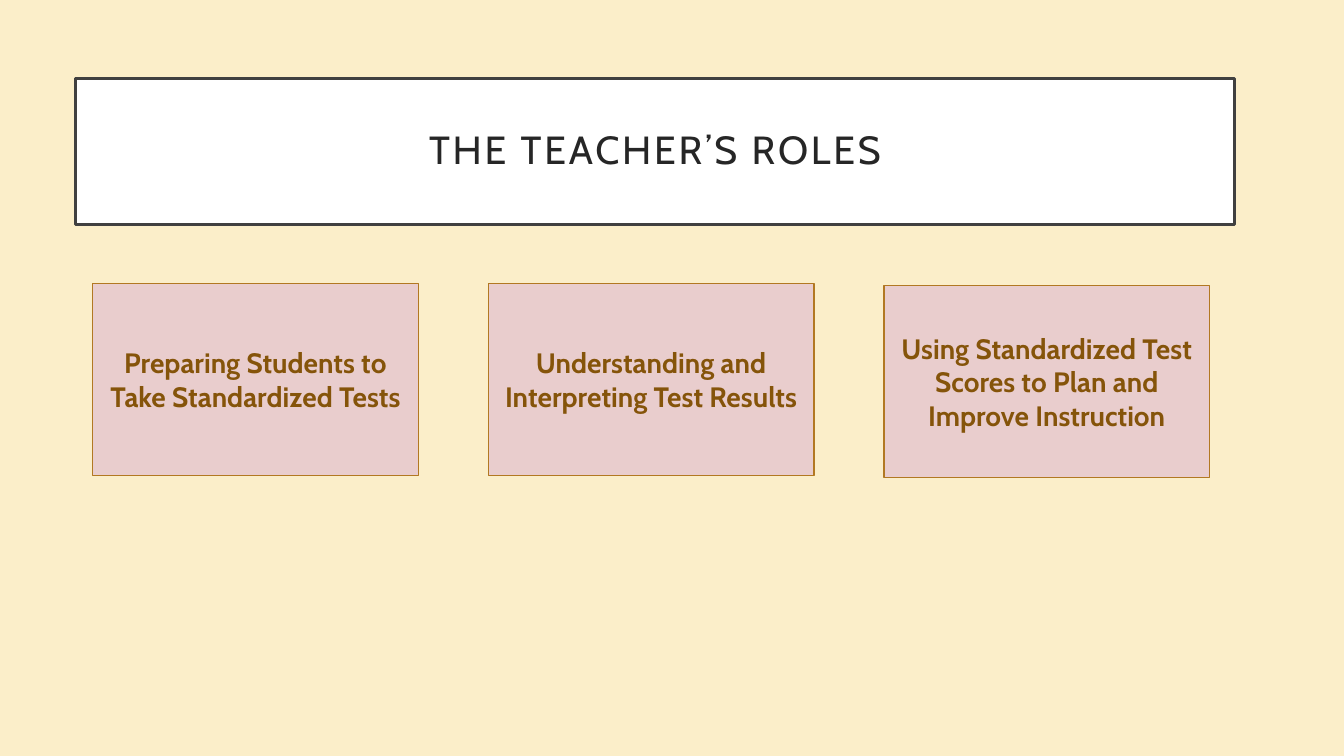
import pptx
import pptx.dml.color
import pptx.enum.shapes
import pptx.enum.text
import pptx.util

Pt = pptx.util.Pt
FONT = "Cabin"

TITLE = "THE TEACHER’S ROLES"
# Each role with its drop below the top of the row
ROLES = [
    ("Preparing Students to Take Standardized Tests", 0),
    ("Understanding and Interpreting Test Results", 0),
    ("Using Standardized Test Scores to Plan and Improve Instruction", 1.44),
]

TITLE_FORMAT = {"name": FONT, "size": Pt(28), "bold": False}
ROLE_FORMAT = {"name": FONT, "size": Pt(20), "bold": True}


def color(hex_string):
    return pptx.dml.color.RGBColor.from_string(hex_string)


def add_panel(page, box, text, fill, line, line_width, text_color, text_format):
    """Draw an outlined rectangle with centred text; return shape, para and span."""
    panel = page.shapes.add_shape(
        pptx.enum.shapes.MSO_SHAPE.RECTANGLE, *(Pt(length) for length in box))
    panel.shadow.inherit = False
    panel.fill.solid()
    panel.fill.fore_color.rgb = color(fill)
    panel.line.color.rgb = color(line)
    panel.line.width = Pt(line_width)

    frame = panel.text_frame
    frame.word_wrap = True
    frame.vertical_anchor = pptx.enum.text.MSO_ANCHOR.MIDDLE
    para = frame.paragraphs[0]
    para.alignment = pptx.enum.text.PP_ALIGN.CENTER
    span = para.add_run()
    span.text = text
    for key, value in text_format.items():
        setattr(span.font, key, value)
    span.font.color.rgb = color(text_color)
    return panel, para, span


def add_title(page, box):
    panel, para, span = add_panel(
        page, box, TITLE, "FFFFFF", "404040", 2.5, "262626", TITLE_FORMAT)
    for side in ("left", "top", "right", "bottom"):
        setattr(panel.text_frame, f"margin_{side}", Pt(14.4))
    para.line_spacing = 0.9
    # Letter spacing of 2 pt, in hundredths of a point
    span.font._element.set("spc", "200")


def add_roles(page, box):
    left, top, width, height = box
    card_width = 232.56
    pitch = (width - card_width) / (len(ROLES) - 1)
    for index, (role, drop) in enumerate(ROLES):
        card = (left + index * pitch, top + drop, card_width, height)
        add_panel(page, card, role, "E9CDCD", "B27822", 1, "85540A", ROLE_FORMAT)


def main():
    deck = pptx.Presentation()
    deck.slide_width, deck.slide_height = Pt(960), Pt(540)
    page = deck.slides.add_slide(deck.slide_layouts[6])

    # Background
    page.background.fill.solid()
    page.background.fill.fore_color.rgb = color("FBEEC9")

    # Title banner and row of role cards
    add_title(page, (54, 56.16, 828, 104.4))
    add_roles(page, (66.24, 202.32, 797.76, 137.52))
    deck.save("out.pptx")


if __name__ == "__main__":
    main()
